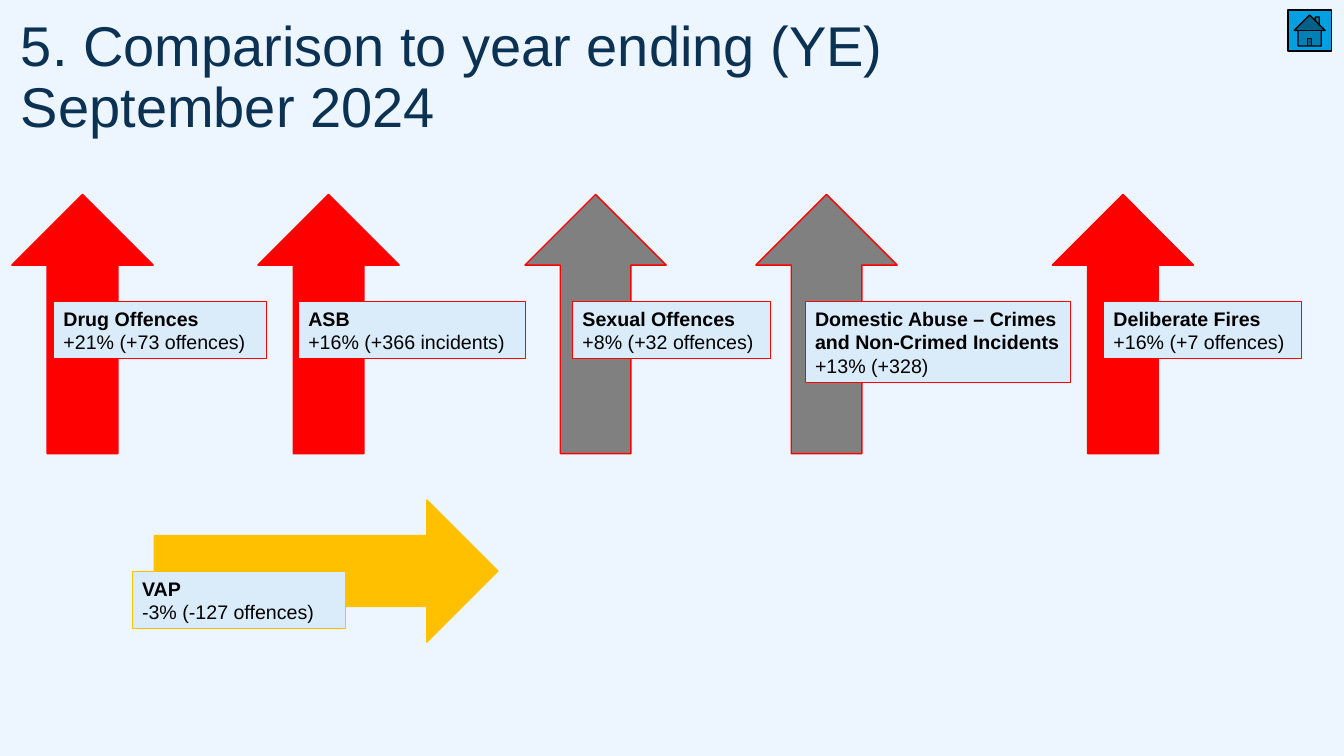
from pptx import Presentation
from pptx.dml.color import RGBColor
from pptx.enum.shapes import MSO_SHAPE
from pptx.enum.text import MSO_ANCHOR, PP_ALIGN
from pptx.util import Cm, Pt

COLOURS = {
    "background": "EDF6FF",
    "title": "0B3153",
    "text": "000000",
    "label": "DAEBFA",
    "red": "FF0000",
    "grey": "808080",
    "amber": "FFC000",
    "home": "00A0E2",
}

RISES = [
    (0.3, "red", 1.35, 5.38, 1.45, "Drug Offences", "+21% (+73 offences)"),
    (6.5, "red", 7.52, 5.72, 1.45, "ASB", "+16% (+366 incidents)"),
    (13.23, "grey", 14.43, 5, 1.45, "Sexual Offences", "+8% (+32 offences)"),
    (19.05, "grey", 20.29, 6.68, 2.06,
     "Domestic Abuse – Crimes and Non-Crimed Incidents", "+13% (+328)"),
    (26.52, "red", 27.81, 5, 1.45, "Deliberate Fires", "+16% (+7 offences)"),
]


def colour(name):
    return RGBColor.from_string(COLOURS[name])


def write(paragraph, text, size=14, bold=False, ink="text", spacing=None):
    paragraph.alignment = PP_ALIGN.LEFT
    paragraph.line_spacing = spacing
    run = paragraph.add_run()
    run.text = text
    run.font.name = "Arial"
    run.font.size = Pt(size)
    run.font.bold = bold
    run.font.color.rgb = colour(ink)


def add_figure(slide, preset, box, fill, line, line_width=1):
    figure = slide.shapes.add_shape(preset, *map(Cm, box))
    figure.shadow.inherit = False
    figure.fill.solid()
    figure.fill.fore_color.rgb = colour(fill)
    figure.line.color.rgb = colour(line)
    figure.line.width = Pt(line_width)
    return figure


def add_label(slide, box, line, offence, change):
    label = add_figure(slide, MSO_SHAPE.RECTANGLE, box, "label", line, 0.75)
    frame = label.text_frame
    frame.word_wrap = True
    frame.margin_right = Cm(0.2)
    frame.vertical_anchor = MSO_ANCHOR.MIDDLE
    write(frame.paragraphs[0], offence, bold=True)
    write(frame.add_paragraph(), change)


def add_title(slide, text):
    frame = slide.shapes.add_textbox(Cm(0.53), Cm(0.3), Cm(28.02), Cm(3.38)).text_frame
    frame.word_wrap = True
    frame.margin_left = frame.margin_right = 0
    frame.margin_top = frame.margin_bottom = 0
    frame.vertical_anchor = MSO_ANCHOR.MIDDLE
    write(frame.paragraphs[0], text, size=40, ink="title", spacing=0.9)


def main():
    deck = Presentation()
    deck.slide_width, deck.slide_height = Cm(33.87), Cm(19.05)
    slide = deck.slides.add_slide(deck.slide_layouts[6])
    slide.background.fill.solid()
    slide.background.fill.fore_color.rgb = colour("background")

    add_title(slide, "5. Comparison to year ending (YE) September 2024")
    for arrow_left, fill, left, width, height, offence, change in RISES:
        add_figure(slide, MSO_SHAPE.UP_ARROW, (arrow_left, 4.9, 3.56, 6.53), fill, "red")
        add_label(slide, (left, 7.59, width, height), "red", offence, change)

    add_figure(slide, MSO_SHAPE.RIGHT_ARROW, (3.89, 12.6, 8.66, 3.58), "amber", "amber")
    add_label(slide, (3.33, 14.4, 5.38, 1.45), "amber", "VAP", "-3% (-127 offences)")
    add_figure(slide, MSO_SHAPE.ACTION_BUTTON_HOME, (32.46, 0.25, 1.09, 1.04), "home", "text")
    deck.save("out.pptx")


if __name__ == "__main__":
    main()
